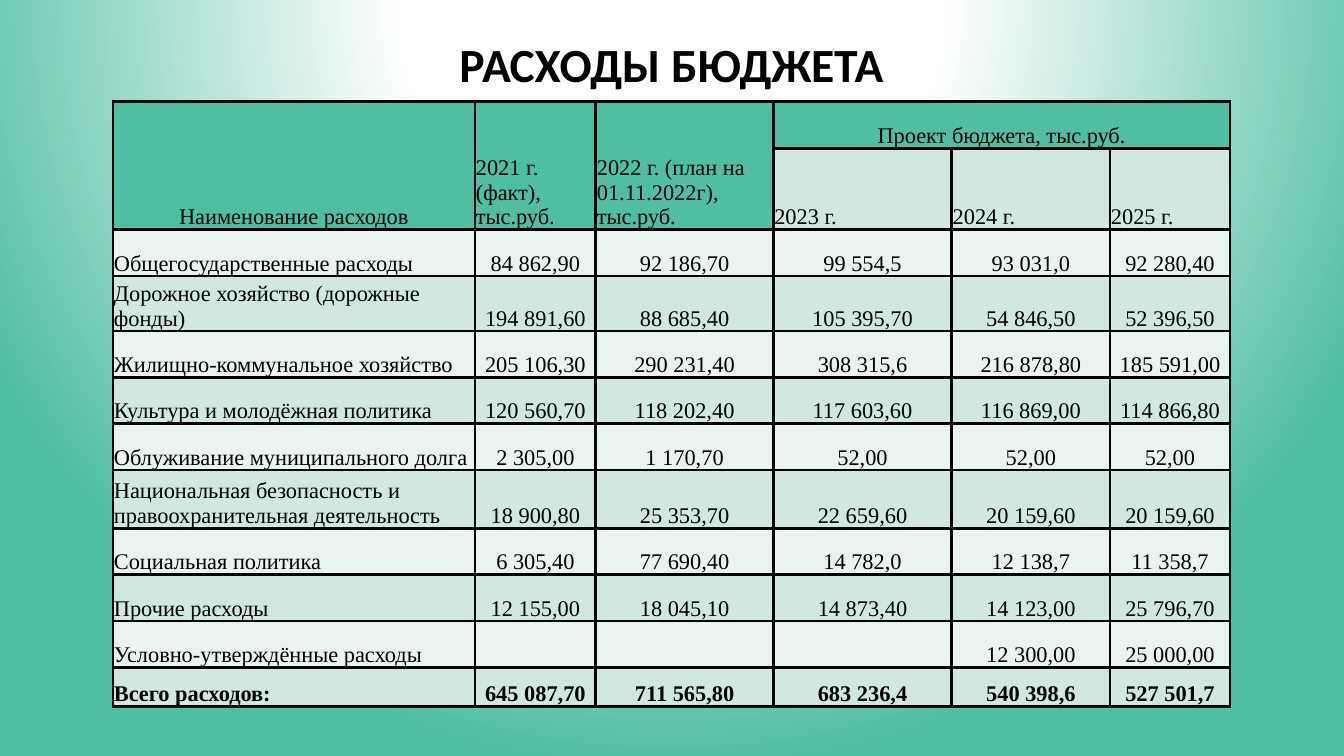
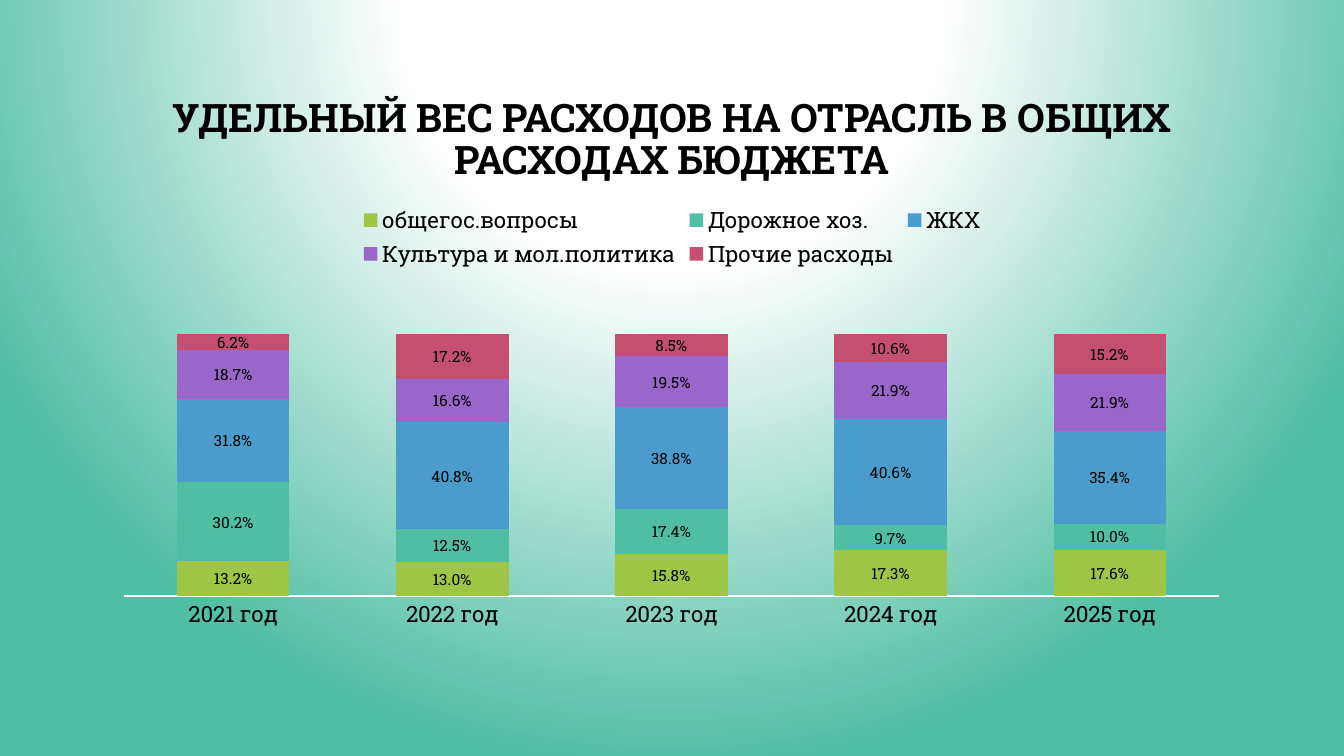
from lxml.etree import SubElement
from pptx import Presentation
from pptx.chart.data import CategoryChartData
from pptx.dml.color import RGBColor
from pptx.enum.chart import XL_CHART_TYPE, XL_LEGEND_POSITION, XL_TICK_MARK
from pptx.enum.text import MSO_ANCHOR, PP_ALIGN
from pptx.oxml import parse_xml
from pptx.oxml.ns import nsdecls, qn
from pptx.util import Inches, Pt

BLACK, WHITE, TEAL = "000000", "FFFFFF", "50BEA3"
PALE, PALEST = "D0E8E0", "E9F4F0"


def rgb(value):
    return RGBColor.from_string(value)


def add_title(s, text, top, height, size, font):
    tf = s.shapes.add_textbox(Inches(1), Inches(top), Inches(11.32), Inches(height)).text_frame
    tf.word_wrap = True
    tf.vertical_anchor = MSO_ANCHOR.MIDDLE
    tf.text = text
    p = tf.paragraphs[0]
    p.alignment = PP_ALIGN.CENTER
    p.line_spacing = 0.9
    r = p.runs[0]
    r.font.name = font
    r.font.size = Pt(size)
    r.font.bold = True
    r.font.color.rgb = rgb(BLACK)


prs = Presentation()
prs.slide_width = Inches(13.33)
prs.slide_height = Inches(7.5)
blank = prs.slide_layouts[6]

master = prs.slide_master
master.background.fill.solid()
bg = master.element.find(".//" + qn("p:bgPr"))
stops = "".join(
    f'<a:gs pos="{pos * 1000}"><a:srgbClr val="{color}"/></a:gs>'
    for pos, color in [(0, WHITE), (35, WHITE), (100, TEAL)]
)
bg.replace(bg[0], parse_xml(
    f'<a:gradFill {nsdecls("a")} rotWithShape="1"><a:gsLst>{stops}</a:gsLst>'
    '<a:path path="circle"><a:fillToRect l="50000" t="-80000" r="50000" b="180000"/></a:path>'
    '</a:gradFill>'
))

s = prs.slides.add_slide(blank)
add_title(s, "РАСХОДЫ БЮДЖЕТА", 0.32, 0.69, 34, "Calibri")

rows = [
    ["Наименование расходов", "2021 г. (факт), тыс.руб.", "2022 г. (план на 01.11.2022г), тыс.руб.",
     "Проект бюджета, тыс.руб.", "", ""],
    ["", "", "", "2023 г.", "2024 г.", "2025 г."],
    ["Общегосударственные расходы", "84 862,90", "92 186,70", "99 554,5", "93 031,0", "92 280,40"],
    ["Дорожное хозяйство (дорожные фонды)", "194 891,60", "88 685,40", "105 395,70", "54 846,50", "52 396,50"],
    ["Жилищно-коммунальное хозяйство", "205 106,30", "290 231,40", "308 315,6", "216 878,80", "185 591,00"],
    ["Культура и молодёжная политика", "120 560,70", "118 202,40", "117 603,60", "116 869,00", "114 866,80"],
    ["Облуживание муниципального долга", "2 305,00", "1 170,70", "52,00", "52,00", "52,00"],
    ["Национальная безопасность и правоохранительная деятельность",
     "18 900,80", "25 353,70", "22 659,60", "20 159,60", "20 159,60"],
    ["Социальная политика", "6 305,40", "77 690,40", "14 782,0", "12 138,7", "11 358,7"],
    ["Прочие расходы", "12 155,00", "18 045,10", "14 873,40", "14 123,00", "25 796,70"],
    ["Условно-утверждённые расходы", "", "", "", "12 300,00", "25 000,00"],
    ["Всего расходов:", "645 087,70", "711 565,80", "683 236,4", "540 398,6", "527 501,7"],
]
widths = [3.59, 1.2, 1.76, 1.77, 1.57, 1.19]
heights = [0.46, 0.75, 0.46, 0.51, 0.46, 0.46, 0.46, 0.58, 0.46, 0.46, 0.46, 0.39]

table = s.shapes.add_table(len(rows), len(widths), Inches(1.12), Inches(1.01),
                           Inches(sum(widths)), Inches(sum(heights))).table
for column, width in zip(table.columns, widths):
    column.width = Inches(width)
for row, height in zip(table.rows, heights):
    row.height = Inches(height)

for i, row in enumerate(rows):
    for j, text in enumerate(row):
        cell = table.cell(i, j)
        cell.vertical_anchor = MSO_ANCHOR.BOTTOM
        cell.margin_left = cell.margin_right = cell.margin_top = Inches(0.01)
        cell.margin_bottom = 0
        for side in ("lnL", "lnR", "lnT", "lnB"):
            ln = SubElement(cell._tc.get_or_add_tcPr(), qn("a:" + side), w=str(Pt(2.25)))
            SubElement(SubElement(ln, qn("a:solidFill")), qn("a:srgbClr"), val=BLACK)
        header = i == 0 or (i == 1 and j < 3)
        cell.fill.solid()
        cell.fill.fore_color.rgb = rgb(TEAL if header else PALE if i % 2 else PALEST)
        cell.text_frame.text = text
        p = cell.text_frame.paragraphs[0]
        centred = j in (0, 3) if i == 0 else i > 1 and j > 0
        p.alignment = PP_ALIGN.CENTER if centred else PP_ALIGN.LEFT
        p.font.size = Pt(16)
        for r in p.runs:
            r.font.name = "Times New Roman"
            r.font.size = Pt(16)
            r.font.bold = i == len(rows) - 1
            r.font.color.rgb = rgb(BLACK)

for j in range(3):
    table.cell(0, j).merge(table.cell(1, j))
table.cell(0, 3).merge(table.cell(0, 5))

s = prs.slides.add_slide(blank)
add_title(s, "УДЕЛЬНЫЙ ВЕС РАСХОДОВ НА ОТРАСЛЬ В ОБЩИХ РАСХОДАХ БЮДЖЕТА", 0.67, 1.45, 28, "Roboto Slab")

shares = [
    ("общегос.вопросы", "9EC544", [0.132, 0.13, 0.158, 0.173, 0.176]),
    ("Дорожное хоз.", TEAL, [0.302, 0.125, 0.174, 0.097, 0.1]),
    ("ЖКХ", "4A9CCC", [0.318, 0.408, 0.388, 0.406, 0.354]),
    ("Культура и мол.политика", "9A66CA", [0.187, 0.166, 0.195, 0.219, 0.219]),
    ("Прочие расходы", "C54F71", [0.062, 0.172, 0.085, 0.106, 0.152]),
]
data = CategoryChartData(number_format="0.0%")
data.categories = [f"{year} год" for year in range(2021, 2026)]
for name, color, values in shares:
    data.add_series(name, values)
chart = s.shapes.add_chart(XL_CHART_TYPE.COLUMN_STACKED, Inches(1), Inches(1.92),
                           Inches(11.32), Inches(4.41), data).chart
chart.has_title = False
chart.font.name = "Roboto Slab"
chart.font.size = Pt(18)
chart.font.color.rgb = rgb(WHITE)

chart.has_legend = True
chart.legend.position = XL_LEGEND_POSITION.TOP
chart.legend.include_in_layout = False

axis = chart.category_axis
axis.major_tick_mark = XL_TICK_MARK.NONE
axis.format.line.color.rgb = rgb(WHITE)
axis.format.line.width = Pt(1.5)
for font in (chart.legend.font, axis.tick_labels.font):
    font.name = "Roboto Slab"
    font.size = Pt(16)
    font.color.rgb = rgb(BLACK)

chart.value_axis.visible = False
chart.value_axis.has_major_gridlines = False
chart.value_axis.minimum_scale = 0
chart.value_axis.maximum_scale = 1.2

plot = chart.plots[0]
plot.gap_width = 95
plot.overlap = 100
plot.vary_by_categories = False
for series, (name, color, values) in zip(plot.series, shares):
    series.format.fill.solid()
    series.format.fill.fore_color.rgb = rgb(color)
    labels = series.data_labels
    labels.show_value = True
    labels.number_format = "0.0%"
    labels.number_format_is_linked = False
    labels.font.name = "Roboto Slab"
    labels.font.size = Pt(11)
    labels.font.color.rgb = rgb(BLACK)

prs.save("out.pptx")
